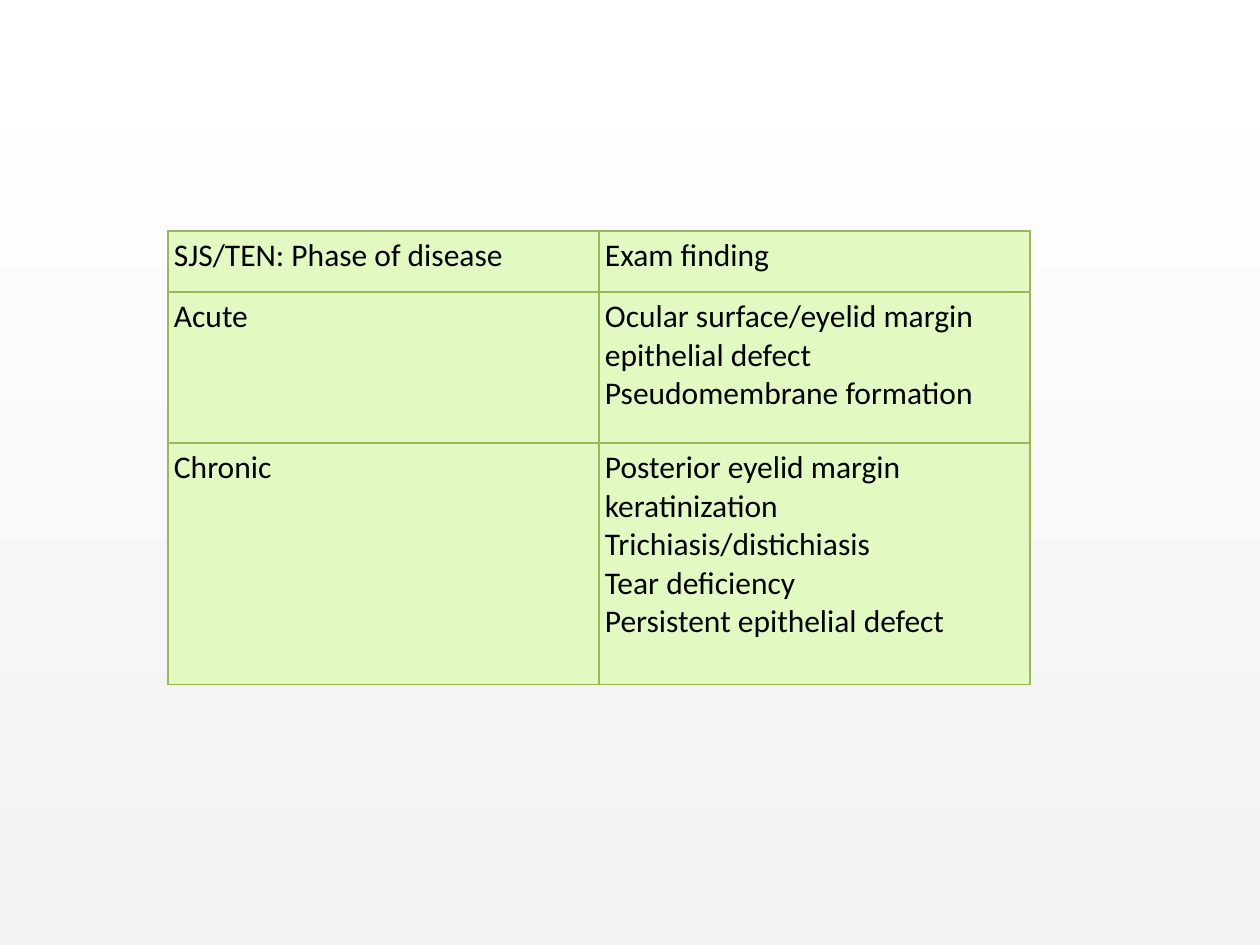
import pptx
import pptx.dml.color
import pptx.enum.shapes
import pptx.enum.text
import pptx.oxml
import pptx.oxml.ns
import pptx.util

PX = 914400 // 126
SLIDE_W, SLIDE_H = 1260, 945
COLORS = {"top": "FFFFFF", "bottom": "F2F2F2", "cell": "E2FAC2",
          "border": "98B955", "text": "000000"}
ROW_HEIGHTS = [61, 151, 242]
FINDINGS = [
    (["SJS/TEN: Phase of disease"], ["Exam finding"]),
    (["Acute"], ["Ocular surface/eyelid margin epithelial defect",
                 "Pseudomembrane formation"]),
    (["Chronic"], ["Posterior eyelid margin keratinization",
                   "Trichiasis/distichiasis",
                   "Tear deficiency",
                   "Persistent epithelial defect"]),
]


def px(n):
    return pptx.util.Emu(n * PX)


def rgb(name):
    return pptx.dml.color.RGBColor.from_string(COLORS[name])


def add_text(p, text, size=18, font="Calibri", color="text"):
    r = p.add_run()
    r.text = text
    r.font.size = pptx.util.Pt(size)
    r.font.name = font
    r.font.bold = False
    r.font.color.rgb = rgb(color)


def set_borders(cell, color="border", width=0.75):
    tcPr = cell._tc.get_or_add_tcPr()
    for i, side in enumerate(("lnL", "lnR", "lnT", "lnB")):
        tcPr.insert(i, pptx.oxml.parse_xml(
            f'<a:{side} {pptx.oxml.ns.nsdecls("a")} w="{pptx.util.Pt(width)}">'
            f'<a:solidFill><a:srgbClr val="{COLORS[color]}"/></a:solidFill>'
            f'</a:{side}>'))


def fill_cell(cell, lines):
    cell.fill.solid()
    cell.fill.fore_color.rgb = rgb("cell")
    cell.margin_left = cell.margin_right = px(6)
    cell.margin_top = cell.margin_bottom = px(6)
    cell.vertical_anchor = pptx.enum.text.MSO_ANCHOR.TOP
    tf = cell.text_frame
    for i, line in enumerate(lines):
        add_text(tf.add_paragraph() if i else tf.paragraphs[0], line)
    set_borders(cell)


def add_backdrop(s, x, y, w, h):
    sp = s.shapes.add_shape(pptx.enum.shapes.MSO_SHAPE.RECTANGLE,
                            px(x), px(y), px(w), px(h))
    sp.shadow.inherit = False
    sp.line.fill.background()
    sp.fill.gradient()
    sp.fill.gradient_angle = 90
    for stop, name, position in zip(sp.fill.gradient_stops,
                                    ("bottom", "top"), (0, 1)):
        stop.color.rgb = rgb(name)
        stop.position = position


def add_findings_table(s, x, y, w, h):
    table = s.shapes.add_table(len(FINDINGS), len(FINDINGS[0]),
                               px(x), px(y), px(w), px(h)).table
    table.first_row = table.horz_banding = False
    for col in table.columns:
        col.width = px(w // len(table.columns))
    for row, height, texts in zip(table.rows, ROW_HEIGHTS, FINDINGS):
        row.height = px(h * height // sum(ROW_HEIGHTS))
        for cell, lines in zip(row.cells, texts):
            fill_cell(cell, lines)


def main():
    prs = pptx.Presentation()
    prs.slide_width, prs.slide_height = px(SLIDE_W), px(SLIDE_H)
    s = prs.slides.add_slide(prs.slide_layouts[6])
    add_backdrop(s, 0, 0, SLIDE_W, SLIDE_H)
    add_findings_table(s, 168, 231, 862, sum(ROW_HEIGHTS))
    prs.save("out.pptx")


if __name__ == "__main__":
    main()
